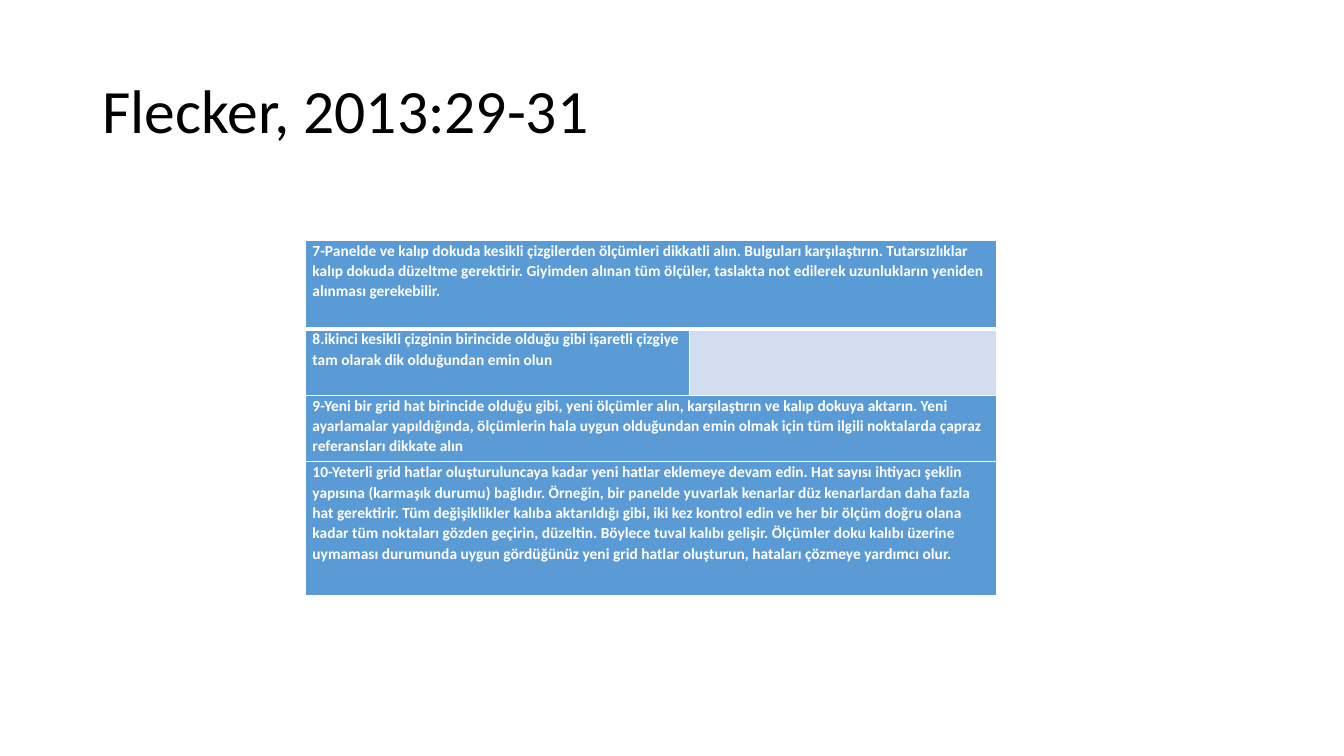
from lxml import etree
from pptx import Presentation
from pptx import util as u
from pptx.dml.color import RGBColor
from pptx.enum import text
from pptx.oxml.ns import qn

COLORS = {"ink": "000000", "white": "FFFFFF", "blue": "5B9BD5", "pale": "D2DEEF"}
COL_WIDTHS = (274.3, 219.6)
ROW_HEIGHTS = (63.4, 47.5, 47.5, 95.8)
STEPS = (
    ("7-Panelde ve kalıp dokuda kesikli çizgilerden ölçümleri dikkatli alın. "
     "Bulguları karşılaştırın. Tutarsızlıklar kalıp dokuda düzeltme gerektirir. "
     "Giyimden alınan tüm ölçüler, taslakta not edilerek uzunlukların yeniden "
     "alınması gerekebilir.",),
    ("8.ikinci kesikli çizginin birincide olduğu gibi işaretli çizgiye tam olarak "
     "dik olduğundan emin olun", ""),
    ("9-Yeni bir grid hat birincide olduğu gibi, yeni ölçümler alın, karşılaştırın "
     "ve kalıp dokuya aktarın. Yeni ayarlamalar yapıldığında, ölçümlerin hala uygun "
     "olduğundan emin olmak için tüm ilgili noktalarda çapraz referansları dikkate alın",),
    ("10-Yeterli grid hatlar oluşturuluncaya kadar yeni hatlar eklemeye devam edin. "
     "Hat sayısı ihtiyacı şeklin yapısına (karmaşık durumu) bağlıdır. Örneğin, bir "
     "panelde yuvarlak kenarlar düz kenarlardan daha fazla hat gerektirir. Tüm "
     "değişiklikler kalıba aktarıldığı gibi, iki kez kontrol edin ve her bir ölçüm "
     "doğru olana kadar tüm noktaları gözden geçirin, düzeltin. Böylece tuval kalıbı "
     "gelişir. Ölçümler doku kalıbı üzerine uymaması durumunda uygun gördüğünüz yeni "
     "grid hatlar oluşturun, hataları çözmeye yardımcı olur.",),
)


def set_all(obj, values):
    for name, value in values.items():
        setattr(obj, name, value)


class Deck:
    def __init__(self, width, height, font):
        self.prs = Presentation()
        set_all(self.prs, {"slide_width": u.Pt(width), "slide_height": u.Pt(height)})
        self.font = font
        self.s = self.prs.slides.add_slide(self.prs.slide_layouts[5])

    def add_text(self, tf, content, size, color, spacing, bold=False):
        p = tf.paragraphs[0]
        set_all(p, {"line_spacing": spacing, "alignment": text.PP_ALIGN.LEFT})
        r = p.add_run()
        r.text = content
        set_all(r.font, {"name": self.font, "size": u.Pt(size), "bold": bold})
        r.font.color.rgb = RGBColor.from_string(COLORS[color])

    def title(self, content, left, top, width, height):
        sp = self.s.shapes.title
        set_all(sp, {"left": u.Pt(left), "top": u.Pt(top),
                     "width": u.Pt(width), "height": u.Pt(height)})
        set_all(sp.text_frame, {"vertical_anchor": text.MSO_ANCHOR.MIDDLE,
                                "word_wrap": True, "auto_size": text.MSO_AUTO_SIZE.NONE})
        self.add_text(sp.text_frame, content, 44, "ink", 0.9)

    def borders(self, cell, top, bottom):
        """Draw white edges, with the given top and bottom widths in points."""
        tc_pr = cell._tc.get_or_add_tcPr()
        for edge, width in (("L", 1), ("R", 1), ("T", top), ("B", bottom)):
            ln = etree.SubElement(tc_pr, qn(f"a:ln{edge}"), w=str(u.Pt(width)))
            fill = etree.SubElement(ln, qn("a:solidFill"))
            etree.SubElement(fill, qn("a:srgbClr"), val=COLORS["white"])

    def table(self, rows, left, top, widths, heights):
        """Build the table; a row with a single text spans every column."""
        frame = self.s.shapes.add_table(
            len(heights), len(widths), u.Pt(left), u.Pt(top),
            u.Pt(sum(widths)), u.Pt(sum(heights)))
        tbl = frame.table
        for col, width in zip(tbl.columns, widths):
            col.width = u.Pt(width)
        for i, (texts, height) in enumerate(zip(rows, heights)):
            tbl.rows[i].height = u.Pt(height)
            for j in range(len(widths)):
                cell = tbl.cell(i, j)
                content = texts[j] if j < len(texts) else ""
                self.borders(cell, 3 if i == 1 else 1, 3 if i == 0 else 1)
                cell.fill.solid()
                shade = "pale" if j and len(texts) > 1 else "blue"
                cell.fill.fore_color.rgb = RGBColor.from_string(COLORS[shade])
                set_all(cell, {"margin_left": u.Pt(5), "margin_right": u.Pt(5),
                               "margin_top": 0, "margin_bottom": 0,
                               "vertical_anchor": text.MSO_ANCHOR.TOP})
                if content:
                    self.add_text(cell.text_frame, content, 11, "white", 1.07, True)
            if len(texts) == 1:
                tbl.cell(i, 0).merge(tbl.cell(i, len(widths) - 1))


def main():
    deck = Deck(960, 540, "Calibri")
    deck.title("Flecker, 2013:29-31", 66, 28.75, 828, 104.4)
    deck.table(STEPS, 218.2, 171.4, COL_WIDTHS, ROW_HEIGHTS)
    deck.prs.save("out.pptx")


if __name__ == "__main__":
    main()
